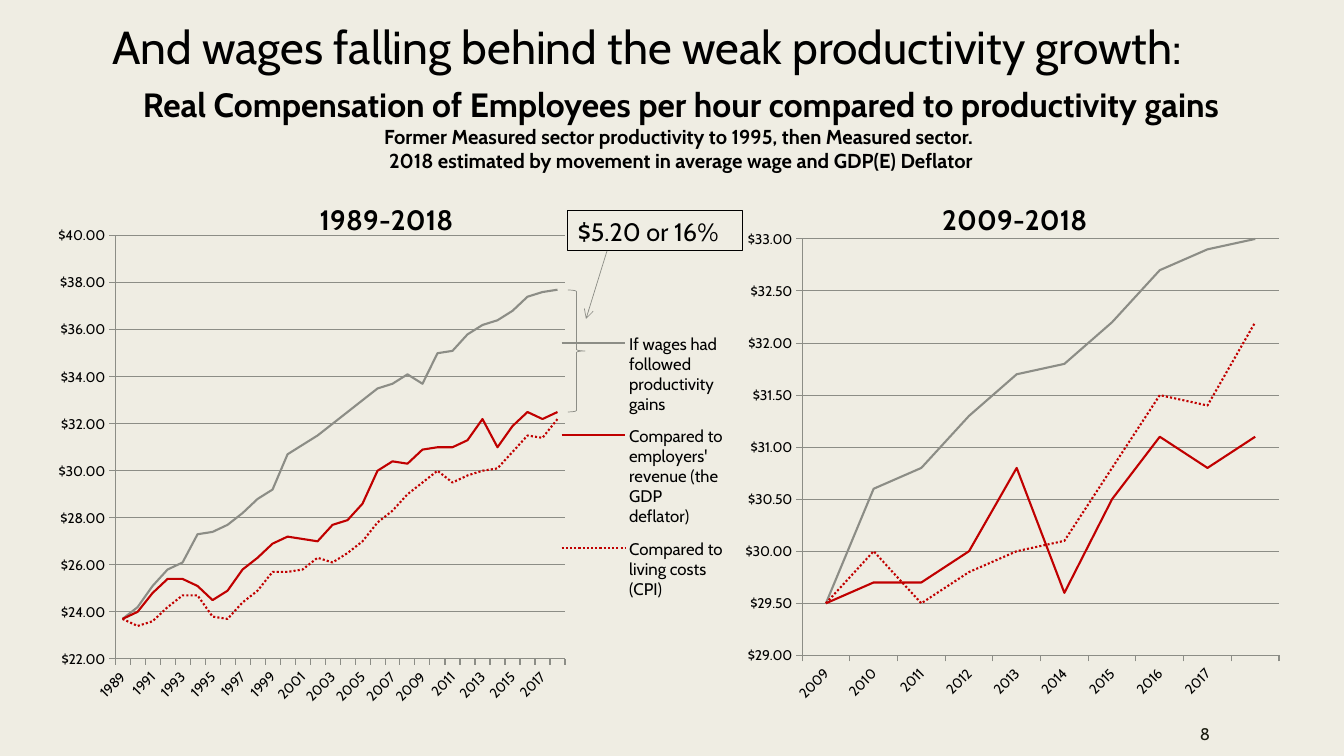
"""Build the slide on wages and productivity growth with two line charts."""
from lxml import etree
from pptx import Presentation
from pptx.chart.data import CategoryChartData
from pptx.dml.color import RGBColor
from pptx.enum.chart import XL_CHART_TYPE as CT, XL_LEGEND_POSITION as LP, XL_TICK_MARK as TM
from pptx.enum.dml import MSO_LINE as DASH
from pptx.enum.shapes import MSO_CONNECTOR as CONN, MSO_SHAPE as SHAPE
from pptx.enum.text import MSO_ANCHOR as ANCHOR, PP_ALIGN as ALIGN
from pptx.oxml import parse_xml
from pptx.oxml.ns import nsdecls, qn
from pptx.util import Pt

PX = 914400 / 100.8
FONT = "Cabin"
COLORS = {"bg": "EFEDE3", "text": "000000", "number": "191B0E", "grey": "8C8D86", "red": "C00000"}

TITLE = "And wages falling behind the weak productivity growth:"
SUBTITLE = [
    ("Real Compensation of Employees per hour compared to productivity gains", 24),
    ("Former Measured sector productivity to 1995, then Measured sector. ", 14.4),
    ("2018 estimated by movement in average wage and GDP(E) Deflator", 14.4),
]
CALLOUT = "$5.20 or 16%"
STYLES = [("grey", DASH.SOLID), ("red", DASH.SOLID), ("red", DASH.ROUND_DOT)]
CHARTS = [
    {
        "title": "2009-2018", "box": (712, 170, 597, 543),
        "plot": (0.151, 0.127, 0.799, 0.767), "title_at": (0.377, 0.045),
        "scale": (29, 33, 0.5), "skip": 1, "legend": None,
        "cats": [str(y) for y in range(2009, 2018)] + [""],
        "series": [
            ("Series 1", [29.5, 30.6, 30.8, 31.3, 31.7, 31.8, 32.2, 32.7, 32.9, 33]),
            ("Series 2", [29.5, 29.7, 29.7, 30, 30.8, 29.6, 30.5, 31.1, 30.8, 31.1]),
            ("Series 3", [29.5, 30, 29.5, 29.8, 30, 30.1, 30.8, 31.5, 31.4, 32.2]),
        ],
    },
    {
        "title": "1989-2018", "box": (47, 170, 688, 547),
        "plot": (0.099, 0.12, 0.654, 0.774), "title_at": (0.389, 0.045),
        "scale": (22, 40, 2), "skip": 2, "legend": (0.757, 0.278, 0.235, 0.53),
        "cats": [str(y) for y in range(1989, 2019)],
        "series": [
            ("If wages had followed productivity gains",
             [23.7, 24.2, 25.1, 25.8, 26.1, 27.3, 27.4, 27.7, 28.2, 28.8,
              29.2, 30.7, 31.1, 31.5, 32, 32.5, 33, 33.5, 33.7, 34.1,
              33.7, 35, 35.1, 35.8, 36.2, 36.4, 36.8, 37.4, 37.6, 37.7]),
            ("Compared to employers' revenue (the GDP deflator)",
             [23.7, 24, 24.8, 25.4, 25.4, 25.1, 24.5, 24.9, 25.8, 26.3,
              26.9, 27.2, 27.1, 27, 27.7, 27.9, 28.6, 30, 30.4, 30.3,
              30.9, 31, 31, 31.3, 32.2, 31, 31.9, 32.5, 32.2, 32.5]),
            ("Compared to living costs (CPI)",
             [23.7, 23.4, 23.6, 24.2, 24.7, 24.7, 23.8, 23.7, 24.4, 24.9,
              25.7, 25.7, 25.8, 26.3, 26.1, 26.5, 27, 27.8, 28.3, 29,
              29.5, 30, 29.5, 29.8, 30, 30.1, 30.8, 31.5, 31.4, 32.2]),
        ],
    },
]


def px(*lengths):
    return [round(n * PX) for n in lengths]


def rgb(name):
    return RGBColor.from_string(COLORS[name])


def style_font(font, size, color="text", bold=False):
    font.name, font.size, font.bold = FONT, Pt(size), bold
    font.color.rgb = rgb(color)


def style_line(line, color, width):
    line.color.rgb = rgb(color)
    line.width = Pt(width)


def write(p, text, size, color="text", bold=False, align=ALIGN.LEFT, spacing=None):
    p.alignment = align
    p.space_before = Pt(0)
    p.line_spacing = spacing
    r = p.add_run()
    r.text = text
    style_font(r.font, size, color, bold)


def layout(numbers, inner=False):
    target = '<c:layoutTarget val="inner"/>' if inner else ""
    modes = '<c:xMode val="edge"/><c:yMode val="edge"/>'
    sizes = "".join(f'<c:{k} val="{n}"/>' for k, n in zip("xywh", numbers))
    return parse_xml(f'<c:layout {nsdecls("c")}><c:manualLayout>{target}{modes}{sizes}'
                     "</c:manualLayout></c:layout>")


def place(parent, index, element):
    for old in parent.findall(qn("c:layout")):
        parent.remove(old)
    parent.insert(index, element)


def add_line_chart(s, spec):
    data = CategoryChartData(number_format="0.0")
    data.categories = spec["cats"]
    for name, values in spec["series"]:
        data.add_series(name, values)
    chart = s.shapes.add_chart(CT.LINE, *px(*spec["box"]), data).chart
    style_font(chart.font, 10)
    chart.plots[0].vary_by_categories = False
    for series, (color, dash) in zip(chart.plots[0].series, STYLES):
        series.smooth = False
        style_line(series.format.line, color, 1.5)
        series.format.line.dash_style = dash

    write(chart.chart_title.text_frame.paragraphs[0], spec["title"], 20, bold=True, align=ALIGN.CENTER)
    chart.chart_title.include_in_layout = False
    place(chart.chart_title._element, 1, layout(spec["title_at"]))
    place(chart._chartSpace.chart.plotArea, 0, layout(spec["plot"], inner=True))

    va, ca = chart.value_axis, chart.category_axis
    va.minimum_scale, va.maximum_scale, va.major_unit = spec["scale"]
    va.tick_labels.number_format = "[$$-1409]#,##0.00"
    va.tick_labels.number_format_is_linked = False
    style_line(va.major_gridlines.format.line, "grey", 0.75)
    for axis in (va, ca):
        axis.major_tick_mark, axis.minor_tick_mark = TM.OUTSIDE, TM.NONE
        style_line(axis.format.line, "grey", 0.75)
        style_font(axis.tick_labels.font, 10)
    ca._element.find(qn("c:txPr")).find(qn("a:bodyPr")).set("rot", "-2700000")
    skip = parse_xml(f'<c:tickLblSkip {nsdecls("c")} val="{spec["skip"]}"/>')
    ca._element.find(qn("c:noMultiLvlLbl")).addprevious(skip)

    chart.has_legend = spec["legend"] is not None
    if chart.has_legend:
        chart.legend.position = LP.RIGHT
        chart.legend.include_in_layout = False
        style_font(chart.legend.font, 12)
        place(chart.legend._element, 1, layout(spec["legend"]))


def add_outline(s, shape, box, color, width):
    sp = s.shapes.add_shape(shape, *px(*box))
    sp.shadow.inherit = False
    sp.fill.background()
    style_line(sp.line, color, width)
    return sp


def main():
    prs = Presentation()
    prs.slide_width, prs.slide_height = px(1344, 756)
    s = prs.slides.add_slide(prs.slide_layouts[5])
    s.background.fill.solid()
    s.background.fill.fore_color.rgb = rgb("bg")

    title = s.shapes.title
    title.left, title.top, title.width, title.height = px(102, 24, 1190, 82)
    title.text_frame.vertical_anchor = ANCHOR.TOP
    write(title.text_frame.paragraphs[0], TITLE, 33, spacing=0.79)

    tf = s.shapes.add_textbox(*px(88, 79, 1186, 100)).text_frame
    tf.word_wrap = False
    for i, (text, size) in enumerate(SUBTITLE):
        p = tf.add_paragraph() if i else tf.paragraphs[0]
        write(p, text, size, bold=True, align=ALIGN.CENTER)

    for spec in CHARTS:
        add_line_chart(s, spec)

    add_outline(s, SHAPE.RIGHT_BRACE, (568, 290, 17, 122), "grey", 0.5)
    callout = add_outline(s, SHAPE.RECTANGLE, (568, 211, 175, 40), "text", 0.75)
    callout.text_frame.word_wrap = True
    write(callout.text_frame.paragraphs[0], CALLOUT, 18)

    arrow = s.shapes.add_connector(CONN.STRAIGHT, *px(607, 251, 586, 319))
    style_line(arrow.line, "grey", 0.5)
    etree.SubElement(arrow.line._get_or_add_ln(), qn("a:tailEnd"), type="arrow")
    etree.SubElement(arrow._element.spPr, qn("a:effectLst"))

    tf = s.shapes.add_textbox(*px(1044, 712, 176, 44)).text_frame
    tf.word_wrap = True
    tf.vertical_anchor = ANCHOR.MIDDLE
    write(tf.paragraphs[0], "8", 12, color="number", align=ALIGN.RIGHT)

    prs.save("out.pptx")


if __name__ == "__main__":
    main()
